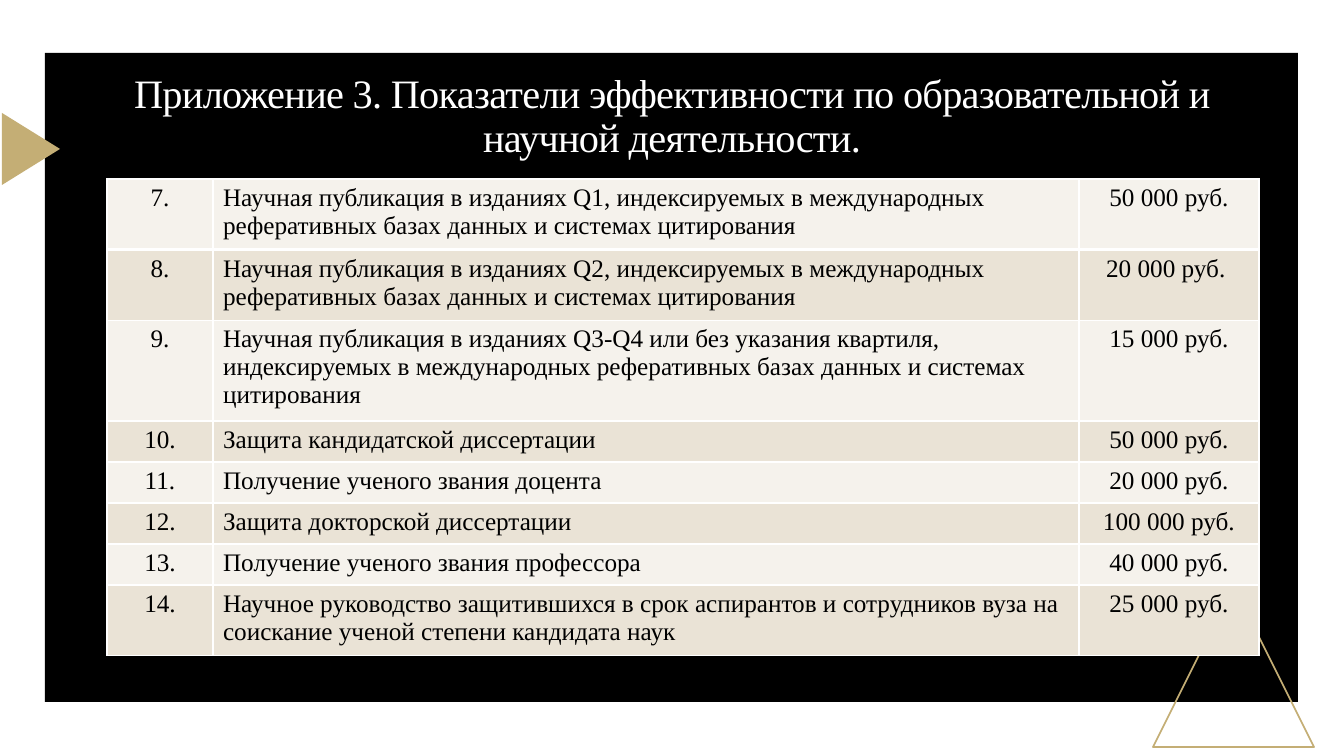
"""Builds the slide with the payment table for educational and research results."""
import lxml.etree
import pptx
import pptx.dml.color
import pptx.enum.shapes
import pptx.enum.text
import pptx.oxml.ns
import pptx.util

PX = 914400 / 100.8
GOLD, WHITE, BLACK = "C4AE75", "FFFFFF", "000000"
ROW_FILLS = ["F5F2EC", "EAE3D6"]
CENTER = pptx.enum.text.PP_ALIGN.CENTER
LEFT = pptx.enum.text.PP_ALIGN.LEFT
SHAPES = pptx.enum.shapes.MSO_SHAPE


def px(*lengths):
    return [pptx.util.Emu(round(length * PX)) for length in lengths]


def rgb(color):
    return pptx.dml.color.RGBColor.from_string(color)


deck = pptx.Presentation()
deck.slide_width, deck.slide_height = px(1344, 756)
slide = deck.slides.add_slide(deck.slide_layouts[6])

decorations = [
    (SHAPES.RECTANGLE, (45, 53, 1253, 649), 0, BLACK, None),
    (SHAPES.ISOSCELES_TRIANGLE, (1153, 586, 161, 161), 0, None, GOLD),
    (SHAPES.ISOSCELES_TRIANGLE, (-5, 120, 72, 58), 90, GOLD, None),
]
for kind, box, rotation, fill, outline in decorations:
    decoration = slide.shapes.add_shape(kind, *px(*box))
    decoration.shadow.inherit = False
    decoration.rotation = rotation
    if fill:
        decoration.fill.solid()
        decoration.fill.fore_color.rgb = rgb(fill)
    else:
        decoration.fill.background()
    if outline:
        decoration.line.color.rgb = rgb(outline)
        decoration.line.width = pptx.util.Pt(1.25)
    else:
        decoration.line.fill.background()

heading = slide.shapes.add_textbox(*px(96, 74, 1152, 87)).text_frame
heading.word_wrap = True
heading.vertical_anchor = pptx.enum.text.MSO_ANCHOR.MIDDLE
heading_line = heading.paragraphs[0]
heading_format = {"alignment": CENTER, "line_spacing": 0.9}
for attribute, value in heading_format.items():
    setattr(heading_line, attribute, value)
heading_text = heading_line.add_run()
heading_text.text = "Приложение 3. Показатели эффективности по образовательной и научной деятельности."
heading_font = {"name": "Times New Roman", "size": pptx.util.Pt(28.8)}
for attribute, value in heading_font.items():
    setattr(heading_text.font, attribute, value)
heading_text.font.color.rgb = rgb(WHITE)
heading_text._r.get_or_add_rPr().set("spc", "-50")

FIRST_NUMBER = 7
payments = [
    ("Научная публикация в изданиях Q1, индексируемых в международных "
     "реферативных базах данных и системах цитирования", "50 000 руб."),
    ("Научная публикация в изданиях Q2, индексируемых в международных "
     "реферативных базах данных и системах цитирования", "20 000 руб. "),
    ("Научная публикация в изданиях Q3-Q4 или без указания квартиля, индексируемых "
     "в международных реферативных базах данных и системах цитирования", "15 000 руб."),
    ("Защита кандидатской диссертации", "50 000 руб."),
    ("Получение ученого звания доцента", "20 000 руб."),
    ("Защита докторской диссертации", "100 000 руб."),
    ("Получение ученого звания профессора", "40 000 руб."),
    ("Научное руководство защитившихся в срок аспирантов и сотрудников вуза "
     "на соискание ученой степени кандидата наук", "25 000 руб."),
]
column_widths = px(106, 866, 180)
column_alignments = [CENTER, LEFT, CENTER]
row_height, = px(41)
cell_font = {"name": "Times New Roman", "size": pptx.util.Pt(18)}

payment_table = slide.shapes.add_table(
    len(payments), len(column_widths), *px(107, 179, 1152, 41 * len(payments))).table
for column, width in zip(payment_table.columns, column_widths):
    column.width = width

for row, (achievement, amount) in enumerate(payments):
    payment_table.rows[row].height = row_height
    border_points = {"lnL": 1, "lnR": 1, "lnT": 3 if row == 1 else 1, "lnB": 3 if row == 0 else 1}
    for column, text in enumerate([f"{FIRST_NUMBER + row}.", achievement, amount]):
        cell = payment_table.cell(row, column)
        paragraph = cell.text_frame.paragraphs[0]
        paragraph.alignment = column_alignments[column]
        entry = paragraph.add_run()
        entry.text = text
        for attribute, value in cell_font.items():
            setattr(entry.font, attribute, value)
        entry.font.color.rgb = rgb(BLACK)
        properties = cell._tc.get_or_add_tcPr()
        for side, points in border_points.items():
            border = lxml.etree.SubElement(
                properties, pptx.oxml.ns.qn(f"a:{side}"), w=str(pptx.util.Pt(points)))
            paint = lxml.etree.SubElement(border, pptx.oxml.ns.qn("a:solidFill"))
            lxml.etree.SubElement(paint, pptx.oxml.ns.qn("a:srgbClr"), val=WHITE)
        cell.fill.solid()
        cell.fill.fore_color.rgb = rgb(ROW_FILLS[row % 2])

deck.save("out.pptx")
